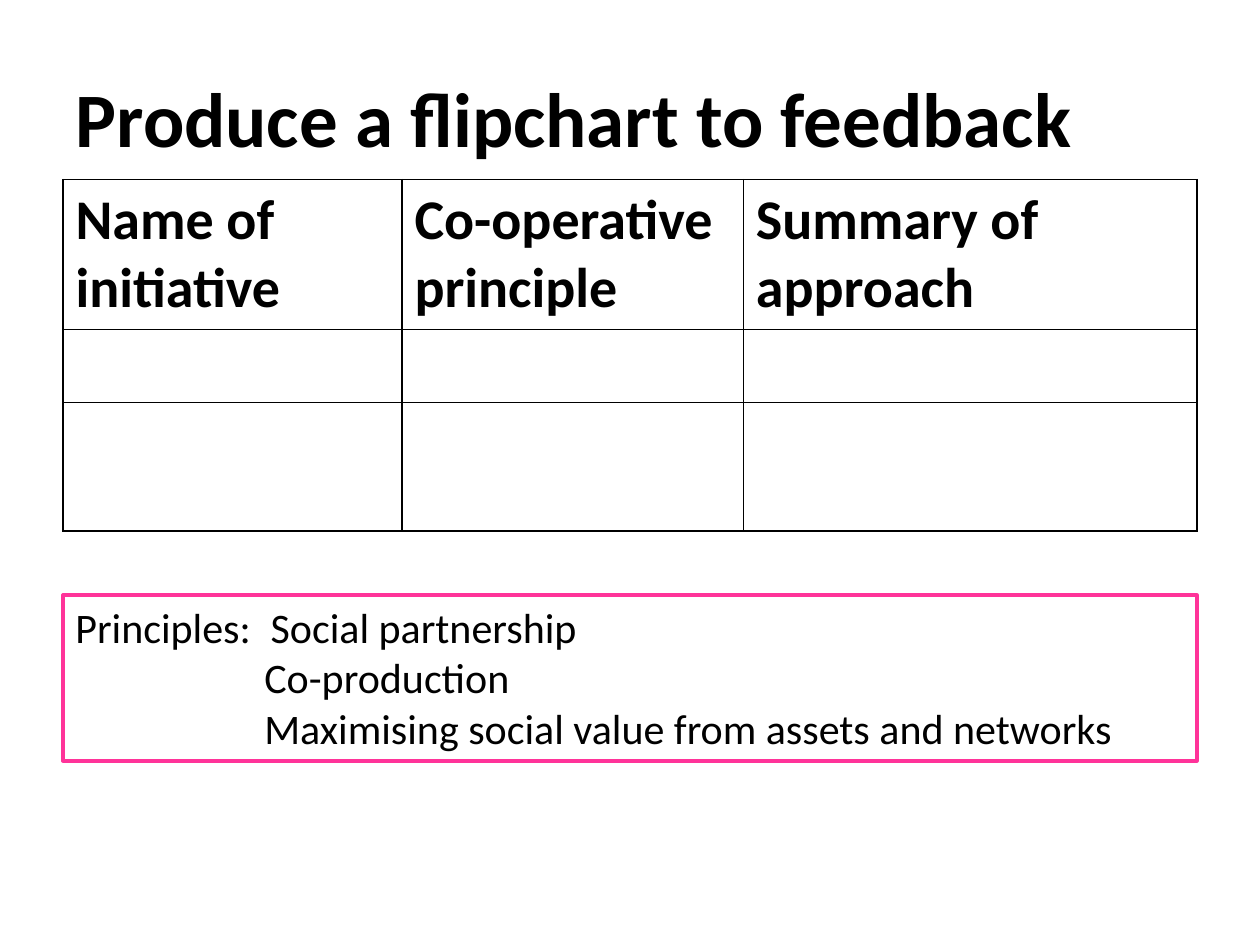
from typing import NamedTuple

from lxml import etree
from pptx import Presentation
from pptx import util as u
from pptx.dml.color import RGBColor
from pptx.enum import shapes, text
from pptx.oxml import ns

BLACK = RGBColor(0, 0, 0)
PINK = RGBColor(0xFF, 0x33, 0x99)
FACE = "Calibri"
WIDE, HIGH = u.Inches(10), u.Inches(7.5)
HEADS = ("Name of initiative", "Co-operative principle", "Summary of approach")
COLS = (2.69, 2.71, 3.6)
ROWS = (1.19, 0.58, 1.02)


class Area(NamedTuple):
    """A box given as shares of the slide's width and height."""

    left: float
    top: float
    width: float
    height: float

    def place(self) -> tuple[int, int, int, int]:
        """Return the box in slide units."""
        return (int(self.left * WIDE), int(self.top * HIGH),
                int(self.width * WIDE), int(self.height * HIGH))


class Line(NamedTuple):
    """One line of the principles box, with its indent or tab in inches."""

    words: str
    inset: float = 0
    tab: float = 0


TITLE = Area(0.05, 0.04, 0.932, 0.167)
GRID = Area(0.05, 0.19, 0.9, 0.372)
NOTE = Area(0.05, 0.63, 0.9, 0.175)
LINES = (
    Line("Principles:\tSocial partnership", tab=1.55),
    Line("Co-production", inset=1.5),
    Line("Maximising social value from assets and networks", inset=1.5),
)


def style(para, size: float, bold: bool = False) -> None:
    """Set the font and left alignment of a paragraph."""
    para.alignment = text.PP_ALIGN.LEFT
    font = para.font
    font.name, font.size, font.bold = FACE, u.Pt(size), bold
    font.color.rgb = BLACK


def frame(cell) -> None:
    """Clear a cell's fill and rule all four of its sides."""
    props = cell._tc.get_or_add_tcPr()
    for side in ("a:lnL", "a:lnR", "a:lnT", "a:lnB"):
        edge = etree.SubElement(props, ns.qn(side), w=str(u.Pt(1)))
        fill = etree.SubElement(edge, ns.qn("a:solidFill"))
        etree.SubElement(fill, ns.qn("a:srgbClr"), val=str(BLACK))
    cell.fill.background()


def draw_title(slide) -> None:
    """Place and format the title."""
    title = slide.shapes.title
    title.left, title.top, title.width, title.height = TITLE.place()
    title.text_frame.text = "Produce a flipchart to feedback"
    title.text_frame.vertical_anchor = text.MSO_ANCHOR.MIDDLE
    style(title.text_frame.paragraphs[0], 44, True)


def draw_grid(slide) -> None:
    """Draw the feedback table with its empty rows."""
    table = slide.shapes.add_table(len(ROWS), len(COLS), *GRID.place()).table
    table.horz_banding = False
    for col, width in zip(table.columns, COLS):
        col.width = u.Inches(width)
    for row, height in zip(table.rows, ROWS):
        row.height = u.Inches(height)
    for cell in table.iter_cells():
        frame(cell)
    for cell, head in zip(table.rows[0].cells, HEADS):
        cell.text = head
        style(cell.text_frame.paragraphs[0], 32, True)


def draw_note(slide) -> None:
    """Draw the outlined box of principles."""
    box = slide.shapes.add_shape(shapes.MSO_SHAPE.RECTANGLE, *NOTE.place())
    box.shadow.inherit = False
    box.fill.background()
    box.line.color.rgb = PINK
    box.line.width = u.Pt(2.25)
    body = box.text_frame
    body.word_wrap = True
    body.vertical_anchor = text.MSO_ANCHOR.TOP
    body.text = "\n".join(line.words for line in LINES)
    for para, line in zip(body.paragraphs, LINES):
        props = para._p.get_or_add_pPr()
        if line.inset:
            props.set("marL", str(u.Inches(line.inset)))
        if line.tab:
            tabs = etree.SubElement(props, ns.qn("a:tabLst"))
            etree.SubElement(tabs, ns.qn("a:tab"), pos=str(u.Inches(line.tab)), algn="l")
        style(para, 24)


def main() -> None:
    """Build and save the slide."""
    deck = Presentation()
    deck.slide_width, deck.slide_height = WIDE, HIGH
    slide = deck.slides.add_slide(deck.slide_layouts[5])
    draw_note(slide)
    draw_title(slide)
    draw_grid(slide)
    deck.save("out.pptx")


if __name__ == "__main__":
    main()
